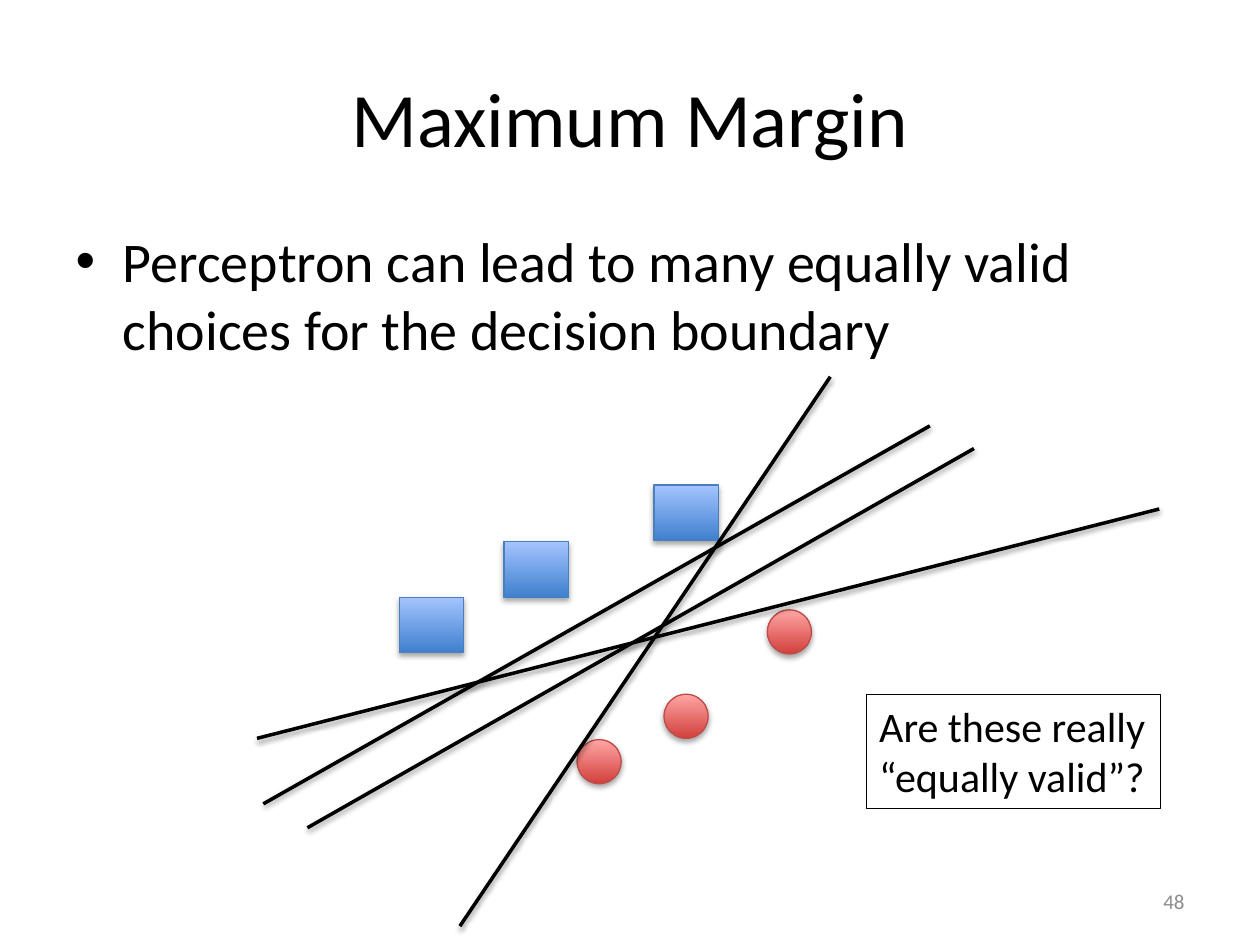
from lxml.etree import SubElement
from pptx import Presentation
from pptx.dml.color import RGBColor
from pptx.enum.shapes import MSO_CONNECTOR, MSO_SHAPE
from pptx.enum.text import MSO_ANCHOR, PP_ALIGN
from pptx.oxml.ns import qn
from pptx.util import Inches, Pt

HUES = {
    "ink": "000000", "gray": "8C8C8C",
    "blue": "3F80CE", "sky": "A4C4FF", "navy": "4B7EBC",
    "red": "D1403C", "pink": "FFA6A5", "rust": "BF4C48",
}


def rgb(name):
    return RGBColor.from_string(HUES[name])


def style(obj, form):
    for key, val in form.items():
        setattr(obj, key, val)


def place(shape, box):
    names = ("left", "top", "width", "height")
    style(shape, dict(zip(names, map(Inches, box))))


def write(shape, lines, size, hue="ink", align=PP_ALIGN.LEFT, **frame):
    text = shape.text_frame
    style(text, frame)
    text.text = "\n".join(lines)
    for para in text.paragraphs:
        para.alignment = align
        style(para.font, {"name": "Calibri", "size": Pt(size)})
        para.font.color.rgb = rgb(hue)


def shade(shape, dist, alpha):
    """Add a soft shadow that falls straight down."""
    props = shape._element.spPr
    for old in props.findall(qn("a:effectLst")):
        props.remove(old)
    glow = SubElement(SubElement(props, qn("a:effectLst")), qn("a:outerShdw"),
                      blurRad=str(Pt(3.1)), dist=str(Pt(dist)),
                      dir="5400000", rotWithShape="0")
    tint = SubElement(glow, qn("a:srgbClr"), val=HUES["ink"])
    SubElement(tint, qn("a:alpha"), val=str(alpha * 1000))


def border(shape, hue, width):
    shape.line.color.rgb = rgb(hue)
    shape.line.width = Pt(width)


def point(slide, kind, box, low, high, edge):
    """Draw one data point, dark at its foot and light at its top."""
    shape = slide.shapes.add_shape(kind, *map(Inches, box))
    shape.fill.gradient()
    shape.fill.gradient_angle = 90
    for stop, hue, pos in zip(shape.fill.gradient_stops, (low, high), (0, 1)):
        stop.color.rgb = rgb(hue)
        stop.position = pos
    border(shape, edge, 0.75)
    shade(shape, 1.8, 35)


def bound(slide, ends):
    """Draw one decision boundary."""
    line = slide.shapes.add_connector(MSO_CONNECTOR.STRAIGHT,
                                      *map(Inches, ends))
    border(line, "ink", 2)
    shade(line, 1.6, 38)


def main():
    deck = Presentation()
    style(deck, {"slide_width": Inches(10), "slide_height": Inches(7.5)})
    slide = deck.slides.add_slide(deck.slide_layouts[1])

    # Title and bullet
    title, body = slide.placeholders
    place(title, (0.5, 0.3, 9, 1.25))
    write(title, ["Maximum Margin"], 44, align=PP_ALIGN.CENTER,
          vertical_anchor=MSO_ANCHOR.MIDDLE)
    place(body, (0.5, 1.75, 9, 1.24))
    write(body, ["Perceptron can lead to many equally valid "
                 "choices for the decision boundary"], 32)

    # Slide number
    page = slide.shapes.add_textbox(*map(Inches, (7.17, 6.95, 2.33, 0.4)))
    write(page, ["48"], 12, "gray", PP_ALIGN.RIGHT, word_wrap=True,
          vertical_anchor=MSO_ANCHOR.MIDDLE)

    # Two classes of points
    for left, top in ((5.19, 3.85), (4, 4.3), (3.17, 4.74)):
        point(slide, MSO_SHAPE.RECTANGLE, (left, top, 0.51, 0.44),
              "blue", "sky", "navy")
    for left, top in ((6.09, 4.84), (4.58, 5.87), (5.27, 5.51)):
        point(slide, MSO_SHAPE.OVAL, (left, top, 0.35, 0.35),
              "red", "pink", "rust")

    # Decision boundaries
    for ends in ((6.59, 2.99, 3.65, 7.35), (2.04, 5.86, 9.2, 4.04),
                 (2.44, 6.57, 7.73, 3.56), (2.09, 6.38, 7.38, 3.38)):
        bound(slide, ends)

    # Boxed question
    note = slide.shapes.add_textbox(*map(Inches, (6.88, 5.51, 2.33, 0.91)))
    border(note, "ink", 0.75)
    write(note, ["Are these really", "“equally valid”?"], 24, word_wrap=False)

    deck.save("out.pptx")


if __name__ == "__main__":
    main()
